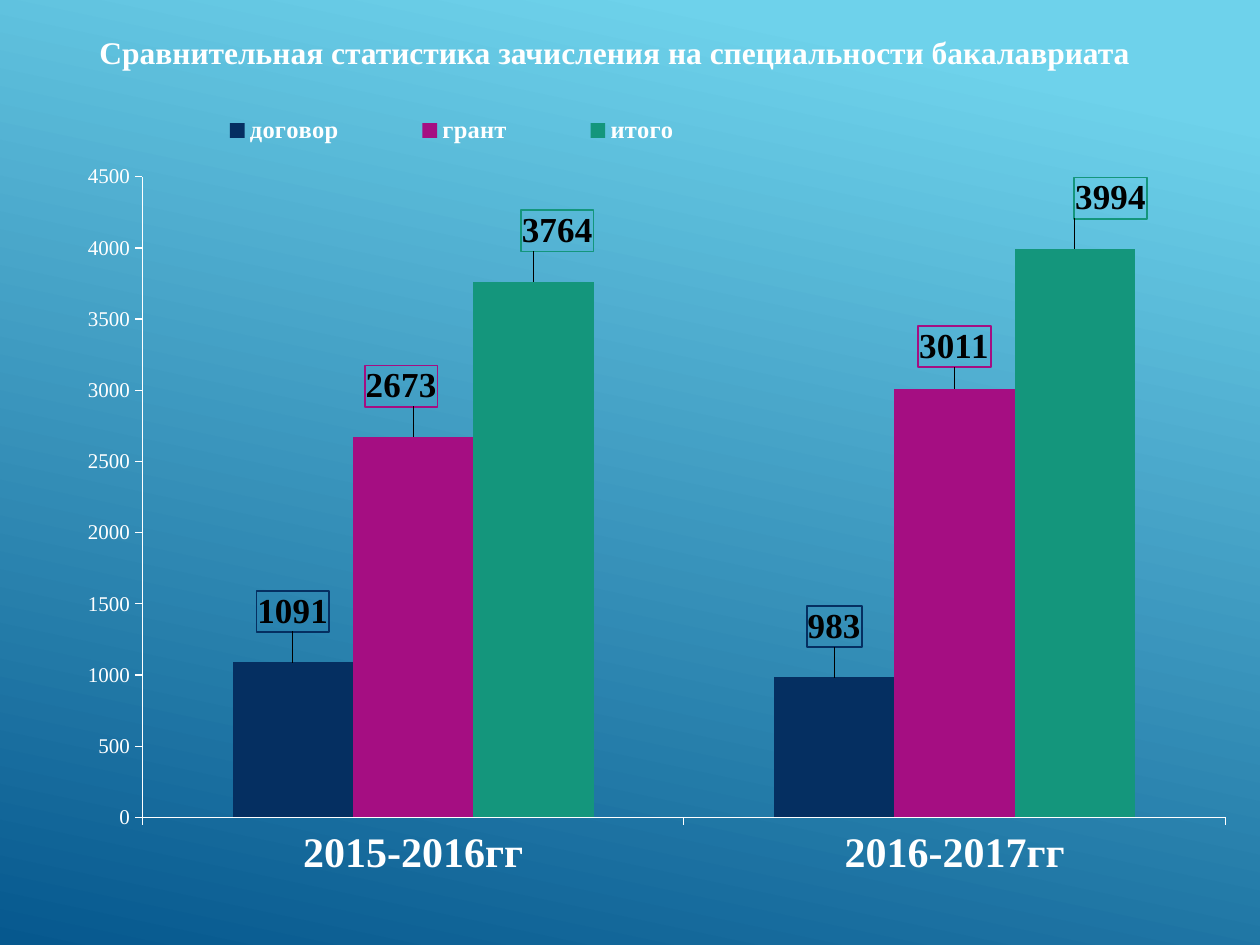
from dataclasses import dataclass

from lxml import etree
from pptx import Presentation
from pptx.chart.data import CategoryChartData
from pptx.dml.color import RGBColor
from pptx.enum.chart import (XL_CHART_TYPE, XL_LABEL_POSITION,
                             XL_LEGEND_POSITION, XL_TICK_MARK)
from pptx.enum.text import MSO_ANCHOR, PP_ALIGN
from pptx.oxml import parse_xml
from pptx.oxml.ns import nsdecls, qn
from pptx.util import Inches, Pt

COLUMNS = XL_CHART_TYPE.COLUMN_CLUSTERED
OUTSIDE_END = XL_LABEL_POSITION.OUTSIDE_END
LEGEND_RIGHT = XL_LEGEND_POSITION.RIGHT
TICK_OUT, TICK_NONE = XL_TICK_MARK.OUTSIDE, XL_TICK_MARK.NONE
CENTER, MIDDLE = PP_ALIGN.CENTER, MSO_ANCHOR.MIDDLE
TITLE_ONLY = 5


@dataclass(frozen=True)
class Theme:
    font: str = "Times New Roman"
    chart_font: str = "Quicksand"
    white: str = "FFFFFF"
    black: str = "000000"
    gradient: tuple = ((0.1, "6ED2EB"), (1, "06588E"))
    gradient_angle: int = 360 - 102
    title_size: int = 18
    year_size: int = 24
    value_size: int = 12
    legend_size: int = 14
    label_size: int = 20


THEME = Theme()
YEARS = ("2015-2016гг", "2016-2017гг")
# name, colour, enrolment per year, label shift per year (fractions of the chart)
ENROLMENT = (
    ("договор", "052F61", (1091, 983), ((0, -0.03), (0, -0.03))),
    ("грант", "A50E82", (2673, 3011), ((-0.01, -0.03), (0, -0.02))),
    ("итого", "14967C", (3764, 3994), ((0.02, -0.03), (0.03, -0.03))),
)


def style_font(font, size, color=THEME.white, bold=False, name=THEME.font):
    for attribute, value in {"size": Pt(size), "bold": bold, "name": name}.items():
        setattr(font, attribute, value)
    font.color.rgb = RGBColor.from_string(color)


def manual_layout(**values):
    """Return a c:layout; the values must come in schema order."""
    layout = parse_xml(f"<c:layout {nsdecls('c')}><c:manualLayout/></c:layout>")
    for name, value in values.items():
        etree.SubElement(layout[0], qn(f"c:{name}")).set("val", str(value))
    return layout


def paint_background(slide):
    fill = slide.background.fill
    fill.gradient()
    fill.gradient_angle = THEME.gradient_angle
    for stop, (position, color) in zip(fill.gradient_stops, THEME.gradient):
        stop.position = position
        stop.color.rgb = RGBColor.from_string(color)


def add_title(slide, text):
    title = slide.shapes.title
    bounds = {"left": 0.51, "top": 0.21, "width": 8.74, "height": 0.4}
    for side, length in bounds.items():
        setattr(title, side, Inches(length))
    frame = title.text_frame
    frame.text = text
    frame.vertical_anchor = MIDDLE
    frame.word_wrap = True
    frame.paragraphs[0].alignment = CENTER
    style_font(frame.paragraphs[0].runs[0].font, THEME.title_size, bold=True)


def style_axis(axis, size, bold=False):
    settings = {"has_major_gridlines": False, "major_tick_mark": TICK_OUT,
                "minor_tick_mark": TICK_NONE}
    for attribute, value in settings.items():
        setattr(axis, attribute, value)
    axis.format.line.color.rgb = RGBColor.from_string(THEME.white)
    axis.format.line.width = Pt(0.75)
    style_font(axis.tick_labels.font, size, bold=bold)


def add_legend(chart):
    chart.has_legend = True
    legend = chart.legend
    legend.position = LEGEND_RIGHT
    legend.include_in_layout = False
    style_font(legend.font, THEME.legend_size, bold=True)
    legend_element = chart.element.find(".//" + qn("c:legend"))
    for old in legend_element.findall(qn("c:layout")):
        legend_element.remove(old)
    legend_element.find(qn("c:legendPos")).addnext(manual_layout(
        xMode="edge", yMode="edge", x=0.1, y=0.07, w=0.5, h=0.05))


def label_points(series, series_element, color, shifts):
    """Give every column a framed value, shifted from its usual place."""
    for index in range(len(shifts)):
        label = series.points[index].data_label
        label.position = OUTSIDE_END
        style_font(label.font, THEME.label_size, THEME.black, bold=True)
    for label_element, (x, y) in zip(series_element.iter(qn("c:dLbl")), shifts):
        for tag in ("c:layout", "c:spPr"):
            for old in label_element.findall(qn(tag)):
                label_element.remove(old)
        layout = manual_layout(x=x, y=y)
        label_element.find(qn("c:idx")).addnext(layout)
        layout.addnext(parse_xml(
            f"<c:spPr {nsdecls('c', 'a')}><a:noFill/><a:ln w='12700'><a:solidFill>"
            f"<a:srgbClr val='{color}'/></a:solidFill></a:ln></c:spPr>"))


def add_enrolment_chart(slide):
    data = CategoryChartData()
    data.categories = YEARS
    for name, _, values, _ in ENROLMENT:
        data.add_series(name, values)
    chart = slide.shapes.add_chart(COLUMNS, Inches(0.28), Inches(0.4),
                                   Inches(9.45), Inches(6.69), data).chart
    chart.has_title = False
    style_font(chart.font, 18, name=THEME.chart_font)
    style_axis(chart.category_axis, THEME.year_size, bold=True)
    style_axis(chart.value_axis, THEME.value_size)
    scale = {"minimum_scale": 0, "maximum_scale": 4500, "major_unit": 500}
    for attribute, value in scale.items():
        setattr(chart.value_axis, attribute, value)
    add_legend(chart)

    plot = chart.plots[0]
    plot.gap_width, plot.overlap, plot.vary_by_categories = 150, 0, False
    series_elements = chart.element.iter(qn("c:ser"))
    for series, element, (_, color, _, shifts) in zip(
            plot.series, list(series_elements), ENROLMENT):
        series.format.fill.solid()
        series.format.fill.fore_color.rgb = RGBColor.from_string(color)
        label_points(series, element, color, shifts)

    plot_area = chart.element.find(".//" + qn("c:plotArea"))
    for old in plot_area.findall(qn("c:layout")):
        plot_area.remove(old)
    plot_area.insert(0, manual_layout(
        layoutTarget="inner", xMode="edge", yMode="edge",
        x=0.09, y=0.15, w=0.91, h=0.76))


def main():
    presentation = Presentation()
    presentation.slide_width, presentation.slide_height = Inches(10), Inches(7.5)
    slide = presentation.slides.add_slide(presentation.slide_layouts[TITLE_ONLY])
    paint_background(slide)
    add_title(slide, "Сравнительная статистика зачисления на специальности бакалавриата")
    add_enrolment_chart(slide)
    presentation.save("out.pptx")


if __name__ == "__main__":
    main()
